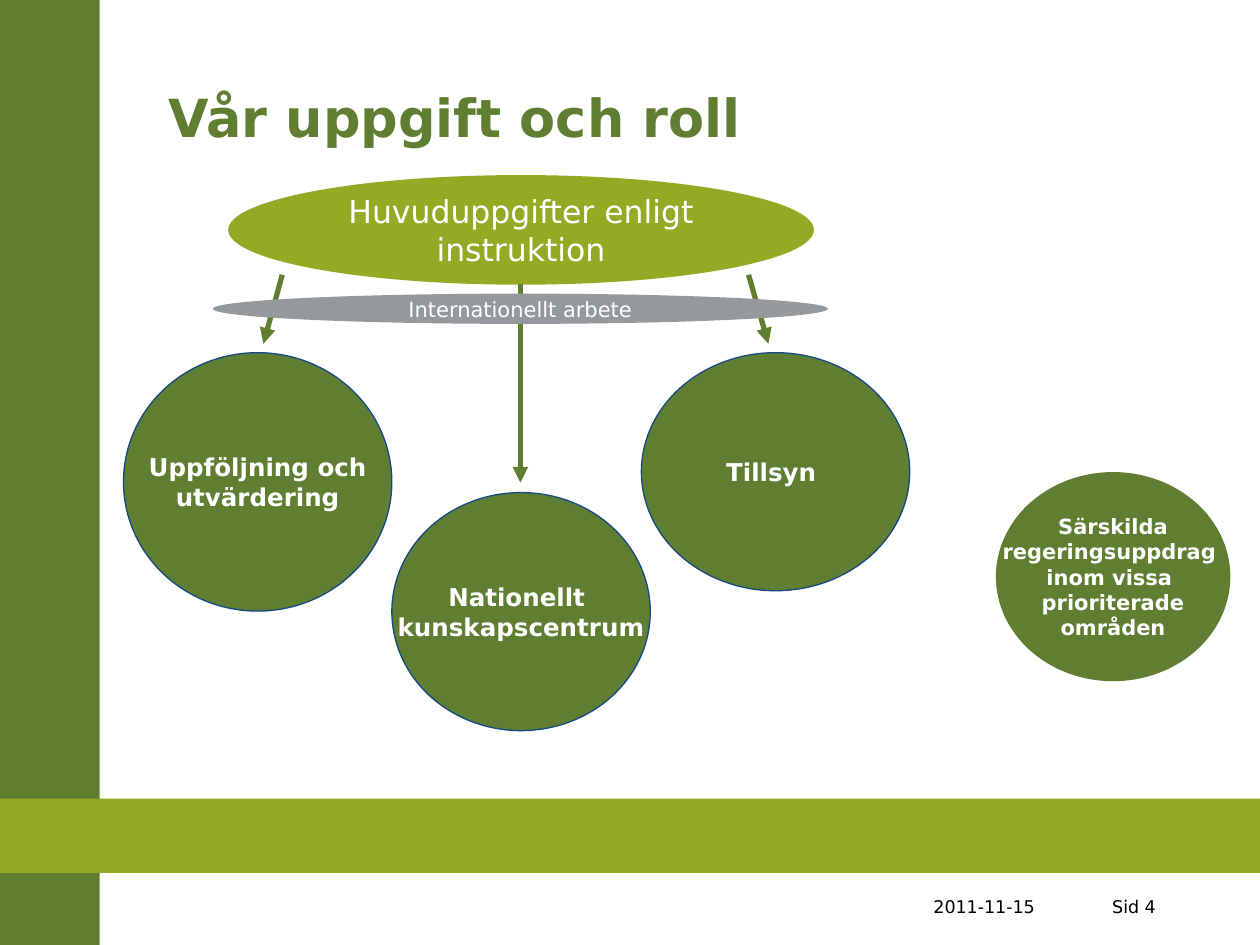
"""Build the slide on tasks and role: a main assignment leading to three areas of work."""
from dataclasses import dataclass
from typing import Optional

from lxml.etree import SubElement
from pptx import Presentation
from pptx.dml.color import RGBColor
from pptx.enum.shapes import MSO_CONNECTOR as Connector, MSO_SHAPE as Shape
from pptx.enum.text import MSO_ANCHOR as Anchor, PP_ALIGN as Align
from pptx.oxml.ns import qn
from pptx.util import Cm, Pt

FONT = "DejaVu Sans"
COLOURS = {
    "green": "607E31",
    "lime": "96A924",
    "grey": "95999E",
    "blue": "164886",
    "white": "FFFFFF",
    "black": "000000",
}


@dataclass
class Area:
    left: float
    top: float
    width: float
    height: float

    def lengths(self) -> tuple:
        return tuple(Cm(n) for n in (self.left, self.top, self.width, self.height))


@dataclass
class Style:
    size: int
    colour: str = "white"
    bold: bool = False
    align: Align = Align.CENTER
    anchor: Anchor = Anchor.MIDDLE
    spacing: Optional[int] = None
    wrap: bool = False


@dataclass
class Block:
    area: Area
    fill: str
    line: Optional[str] = None
    kind: Shape = Shape.OVAL
    lines: tuple = ()
    style: Optional[Style] = None


@dataclass
class Label:
    area: Area
    text: str
    style: Style


@dataclass
class Arrow:
    start: tuple
    end: tuple


TITLE = Style(30, "green", True, Align.LEFT, spacing=36, wrap=True)
FOOTER = Style(10, "black", align=Align.RIGHT, anchor=Anchor.BOTTOM, wrap=True)
TASK = Style(14, bold=True)

BARS = [
    Block(Area(0, 0, 2.01, 19.05), "green", kind=Shape.RECTANGLE),
    Block(Area(0, 16.1, 25.4, 1.5), "lime", kind=Shape.RECTANGLE),
]
LABELS = [
    Label(Area(3.15, 0.76, 20.35, 3.18), "Vår uppgift och roll", TITLE),
    Label(Area(17.5, 17.53, 3.61, 1.09), "2011-11-15", FOOTER),
    Label(Area(21.31, 17.53, 2.24, 1.09), "Sid 4", FOOTER),
]
TASKS = [
    Block(Area(7.9, 9.93, 5.21, 4.8), "green", "blue",
          lines=("Nationellt ", "kunskapscentrum"), style=TASK),
    Block(Area(20.09, 9.53, 4.7, 4.19), "green", "green",
          lines=("Särskilda", "regeringsuppdrag ", "inom vissa ", "prioriterade", "områden"),
          style=Style(12, bold=True)),
    Block(Area(4.6, 3.53, 11.81, 2.21), "lime",
          lines=("Huvuduppgifter enligt", "instruktion"), style=Style(18)),
    Block(Area(2.49, 7.11, 5.41, 5.21), "green", "blue",
          lines=("Uppföljning och", "utvärdering"), style=TASK),
    Block(Area(12.93, 7.11, 5.41, 4.8), "green", "blue", lines=("Tillsyn ",), style=TASK),
]
ARROWS = [
    Arrow((10.49, 5.72), (10.49, 9.73)),
    Arrow((15.09, 5.54), (15.49, 6.93)),
    Arrow((5.69, 5.54), (5.31, 6.93)),
]
INTERNATIONAL = Block(Area(4.29, 5.92, 12.4, 0.61), "grey",
                      lines=("Internationellt arbete",), style=Style(12))


def colour(name: str) -> RGBColor:
    return RGBColor.from_string(COLOURS[name])


def write(frame, lines: tuple, style: Style) -> None:
    frame.word_wrap = style.wrap
    frame.vertical_anchor = style.anchor
    for index, text in enumerate(lines):
        para = frame.add_paragraph() if index else frame.paragraphs[0]
        para.text = text
        para.alignment = style.align
        if style.spacing:
            para.line_spacing = Pt(style.spacing)
        para.font.name = FONT
        para.font.size = Pt(style.size)
        para.font.bold = style.bold
        para.font.color.rgb = colour(style.colour)


def draw_block(page, block: Block) -> None:
    shape = page.shapes.add_shape(block.kind, *block.area.lengths())
    shape.shadow.inherit = False
    shape.fill.solid()
    shape.fill.fore_color.rgb = colour(block.fill)
    if block.line:
        shape.line.color.rgb = colour(block.line)
        shape.line.width = Pt(0.75)
    else:
        shape.line.fill.background()
    if block.style:
        write(shape.text_frame, block.lines, block.style)


def draw_label(page, label: Label) -> None:
    box = page.shapes.add_textbox(*label.area.lengths())
    write(box.text_frame, (label.text,), label.style)


def draw_arrow(page, arrow: Arrow) -> None:
    ends = (Cm(n) for n in arrow.start + arrow.end)
    connector = page.shapes.add_connector(Connector.STRAIGHT, *ends)
    connector.line.color.rgb = colour("green")
    connector.line.width = Pt(3)
    SubElement(connector.line._get_or_add_ln(), qn("a:tailEnd"), type="triangle")
    SubElement(connector._element.spPr, qn("a:effectLst"))


def main() -> None:
    deck = Presentation()
    deck.slide_width, deck.slide_height = Cm(25.4), Cm(19.05)
    page = deck.slides.add_slide(deck.slide_layouts[6])
    for bar in BARS:
        draw_block(page, bar)
    for label in LABELS:
        draw_label(page, label)
    for task in TASKS:
        draw_block(page, task)
    for arrow in ARROWS:
        draw_arrow(page, arrow)
    draw_block(page, INTERNATIONAL)
    deck.save("out.pptx")


if __name__ == "__main__":
    main()
